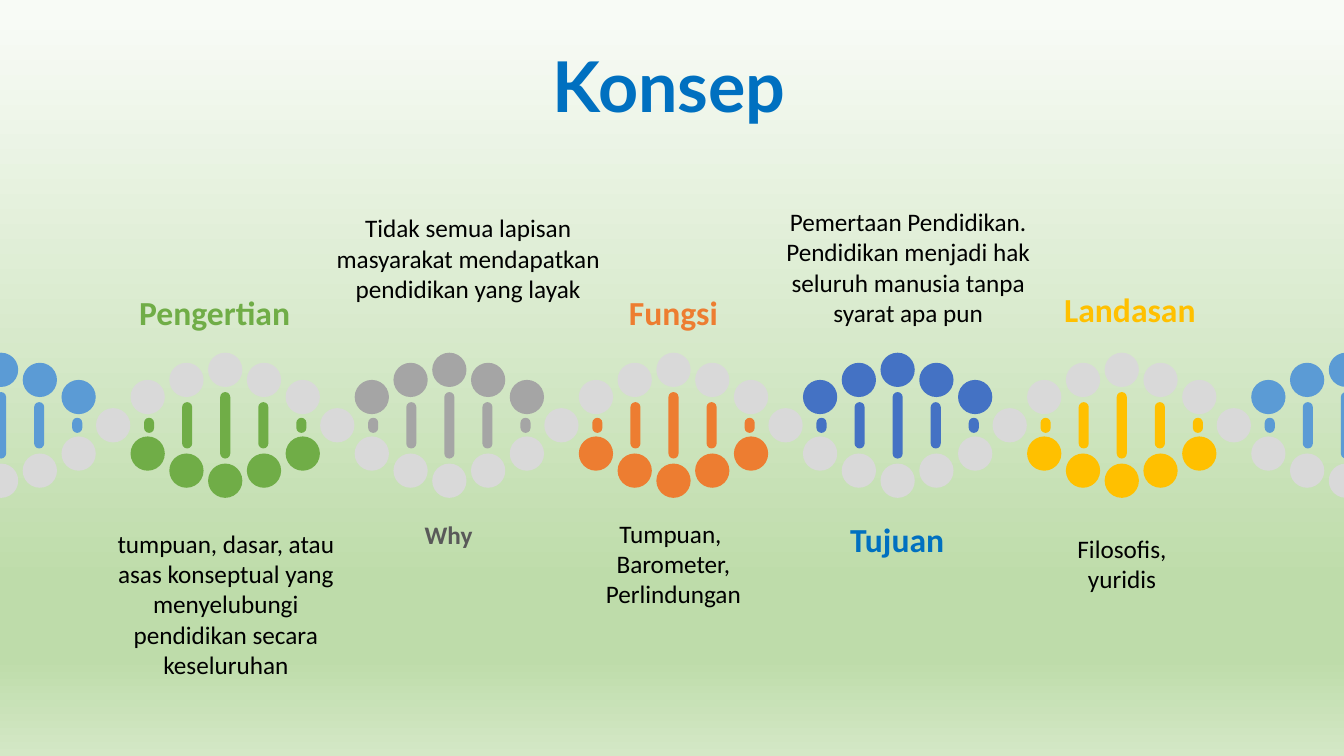
from copy import deepcopy
from dataclasses import dataclass

from pptx import Presentation
from pptx.dml.color import RGBColor
from pptx.enum.shapes import MSO_SHAPE
from pptx.enum.text import MSO_ANCHOR, MSO_AUTO_SIZE, PP_ALIGN
from pptx.oxml.ns import qn
from pptx.slide import Slide
from pptx.util import Pt

SLIDE_WIDTH, SLIDE_HEIGHT = 960, 540
PALE = RGBColor(0xD9, 0xD9, 0xD9)
SKY = RGBColor(0x5B, 0x9B, 0xD5)
GREEN = RGBColor(0x70, 0xAD, 0x47)
GRAY = RGBColor(0xA5, 0xA5, 0xA5)
ORANGE = RGBColor(0xED, 0x7D, 0x31)
BLUE = RGBColor(0x44, 0x72, 0xC4)
GOLD = RGBColor(0xFF, 0xC0, 0x00)
TITLE_BLUE = RGBColor(0x00, 0x70, 0xC0)
DARK_GRAY = RGBColor(0x59, 0x59, 0x59)
BLACK = RGBColor(0x00, 0x00, 0x00)

BACKDROP = ((2, "F8FBF6"), (77, "BEDCAA"), (87, "BEDCAA"), (100, "D4E8C6"))

HELIX_START, HELIX_PITCH, HELIX_AXIS = 0.8, 160.1, 303.8
DOT_SIZE, RUNG_WIDTH = 24.5, 7.2
DOT_STEP, RUNG_STEP = 27.7, 27.2


@dataclass(frozen=True)
class Pair:
    dot_rise: float
    rung_height: float


@dataclass(frozen=True)
class Turn:
    color: RGBColor
    colored_on_top: bool


@dataclass(frozen=True)
class Caption:
    left: float
    top: float
    width: float
    height: float
    paragraphs: tuple[str, ...]
    size: float = 18
    color: RGBColor = BLACK
    bold: bool = False
    font: str = "Calibri"


PAIRS = (Pair(39.6, 47.5), Pair(32.4, 33.1), Pair(20.2, 10.8))

TURNS = (
    Turn(SKY, True),
    Turn(GREEN, False),
    Turn(GRAY, True),
    Turn(ORANGE, False),
    Turn(BLUE, True),
    Turn(GOLD, False),
    Turn(SKY, True),
)

TITLE = Caption(22.3, 39.6, 911.5, 56.9, ("Konsep",), 50, TITLE_BLUE, True, "Lato")

CAPTIONS = (
    Caption(79.9, 205.2, 146.9, 36, ("Pengertian",), 24, GREEN, True),
    Caption(267.1, 367.2, 106.6, 29, ("Why",), 18, DARK_GRAY, True),
    Caption(427.7, 205.2, 106.6, 36, ("Fungsi",), 24, ORANGE, True),
    Caption(587.5, 367.2, 106.6, 36, ("Tujuan",), 24, TITLE_BLUE, True),
    Caption(748.1, 203, 118.1, 36, ("Landasan",), 24, GOLD, True),
    Caption(231.1, 148.3, 206.6, 72.7,
            ("Tidak semua lapisan masyarakat mendapatkan pendidikan yang layak",)),
    Caption(539.3, 144, 218.9, 94.5,
            ("Pemertaan Pendidikan.",
             "Pendidikan menjadi hak seluruh manusia tanpa syarat apa pun")),
    Caption(388.1, 366.5, 185.8, 72.7,
            ("Tumpuan, ", "Barometer, Perlindungan")),
    Caption(68.4, 373.7, 185.8, 116.3,
            ("tumpuan, dasar, atau asas konseptual yang menyelubungi "
             "pendidikan secara keseluruhan",)),
    Caption(708.5, 377.3, 185.8, 50.9, ("Filosofis,", "yuridis")),
)


def paint_background(slide: Slide) -> None:
    fill = slide.background.fill
    fill.gradient()
    fill.gradient_angle = 270
    stops = next(slide.element.iter(qn("a:gsLst")))
    template = deepcopy(stops[0])
    for stop in list(stops):
        stops.remove(stop)
    for position, color in BACKDROP:
        stop = deepcopy(template)
        stop.set("pos", str(position * 1000))
        for child in list(stop):
            stop.remove(child)
        stop.makeelement
        shade = stop.makeelement(qn("a:srgbClr"), {"val": color})
        stop.append(shade)
        stops.append(stop)


def add_part(slide: Slide, kind: MSO_SHAPE, center_x: float, center_y: float,
             width: float, height: float, color: RGBColor) -> None:
    part = slide.shapes.add_shape(
        kind, Pt(center_x - width / 2), Pt(center_y - height / 2), Pt(width), Pt(height))
    if kind == MSO_SHAPE.ROUNDED_RECTANGLE:
        part.adjustments[0] = 0.5
    part.shadow.inherit = False
    part.fill.solid()
    part.fill.fore_color.rgb = color
    part.line.fill.background()


def add_dot(slide: Slide, center_x: float, center_y: float, color: RGBColor) -> None:
    add_part(slide, MSO_SHAPE.OVAL, center_x, center_y, DOT_SIZE, DOT_SIZE, color)


def add_turn(slide: Slide, turn: Turn, center: float) -> None:
    upper, lower = (turn.color, PALE) if turn.colored_on_top else (PALE, turn.color)
    for step in range(-2, 3):
        dot_x = center + step * DOT_STEP
        if not 0 <= dot_x <= SLIDE_WIDTH + DOT_SIZE / 2:
            continue
        pair = PAIRS[abs(step)]
        add_dot(slide, dot_x, HELIX_AXIS - pair.dot_rise, upper)
        add_dot(slide, dot_x, HELIX_AXIS + pair.dot_rise, lower)
        add_part(slide, MSO_SHAPE.ROUNDED_RECTANGLE, center + step * RUNG_STEP,
                 HELIX_AXIS, RUNG_WIDTH, pair.rung_height, turn.color)


def add_helix(slide: Slide) -> None:
    for index, turn in enumerate(TURNS):
        center = HELIX_START + index * HELIX_PITCH
        add_turn(slide, turn, center)
        if index < len(TURNS) - 1:
            add_dot(slide, center + HELIX_PITCH / 2, HELIX_AXIS, PALE)


def add_caption(slide: Slide, caption: Caption):
    box = slide.shapes.add_textbox(
        Pt(caption.left), Pt(caption.top), Pt(caption.width), Pt(caption.height))
    frame = box.text_frame
    frame.word_wrap = True
    frame.auto_size = MSO_AUTO_SIZE.SHAPE_TO_FIT_TEXT
    for index, text in enumerate(caption.paragraphs):
        paragraph = frame.add_paragraph() if index else frame.paragraphs[0]
        paragraph.alignment = PP_ALIGN.CENTER
        run = paragraph.add_run()
        run.text = text
        run.font.name = caption.font
        run.font.size = Pt(caption.size)
        run.font.bold = caption.bold
        run.font.color.rgb = caption.color
    return frame


def add_title(slide: Slide) -> None:
    frame = add_caption(slide, TITLE)
    frame.auto_size = MSO_AUTO_SIZE.NONE
    frame.vertical_anchor = MSO_ANCHOR.MIDDLE
    frame.paragraphs[0].line_spacing = 0.7
    frame.paragraphs[0].space_before = Pt(10)


def main() -> None:
    presentation = Presentation()
    presentation.slide_width = Pt(SLIDE_WIDTH)
    presentation.slide_height = Pt(SLIDE_HEIGHT)
    slide = presentation.slides.add_slide(presentation.slide_layouts[6])
    paint_background(slide)
    add_title(slide)
    add_helix(slide)
    for caption in CAPTIONS:
        add_caption(slide, caption)
    presentation.save("out.pptx")


if __name__ == "__main__":
    main()
